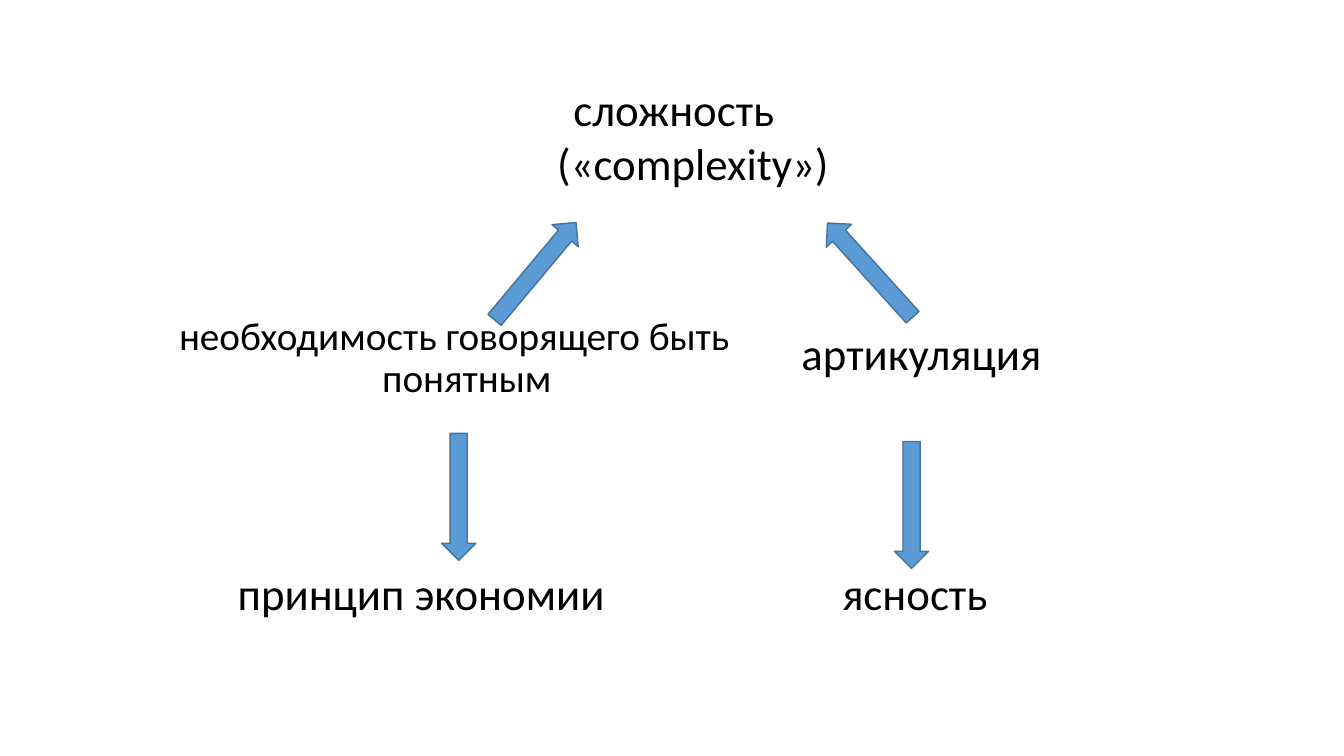
from dataclasses import dataclass

from pptx import Presentation
from pptx.dml.color import RGBColor
from pptx.enum.shapes import MSO_SHAPE
from pptx.enum.text import PP_ALIGN
from pptx.util import Inches, Pt

BLACK = RGBColor(0x00, 0x00, 0x00)
BLUE = RGBColor(0x5B, 0x9B, 0xD5)
EDGE = RGBColor(0x43, 0x73, 0x9E)
FONT = "Calibri"

WIDE, HIGH = Inches(13.33), Inches(7.5)
LINE = 8.5  # height of one text row, in percent of the slide
LOW = 74.13  # top of the bottom row of labels
LONG, THICK = 9.45, 4.53  # arrow size


@dataclass
class Label:
    """Place is in percent of the slide's width and height."""
    text: str
    left: float
    top: float
    width: float
    rows: int = 1
    size: int = 32
    hang: float = 0.38
    space: float = 1.0
    align: PP_ALIGN = PP_ALIGN.CENTER


@dataclass
class Arrow:
    """Place of the centre in percent of the slide, turn in degrees."""
    mid: float
    row: float
    turn: float


LABELS = [
    Label("cложность («complexity»)", 31.73, 10.13, 36.83, rows=2),
    Label("необходимость говорящего быть понятным", 12.53, 41.2, 42.53,
          rows=2, size=28, hang=0.25, space=0.9),
    Label("артикуляция", 58.89, 42.4, 30.23, align=PP_ALIGN.LEFT),
    Label("принцип экономии", 16.95, LOW, 30.23, align=PP_ALIGN.LEFT),
    Label("ясность", 52.96, LOW, 30.23),
]

ARROWS = [
    Arrow(39.83, 35.87, 309.9),
    Arrow(64.74, 35.73, 227.9),
    Arrow(34.13, 65.73, 90),
    Arrow(67.82, 66.8, 90),
]


def across(share: float) -> int:
    return round(WIDE * share / 100)


def down(share: float) -> int:
    return round(HIGH * share / 100)


def write(frame, text: str, *, size: int, hang: float, space: float,
          align: PP_ALIGN) -> None:
    """Fill a text frame with one paragraph that has a hanging indent."""
    frame.word_wrap = True
    para = frame.paragraphs[0]
    para.alignment = align
    para.line_spacing = space
    props = para._p.get_or_add_pPr()
    props.set("marL", str(Inches(hang)))
    props.set("indent", str(-Inches(hang)))
    run = para.add_run()
    run.text = text
    run.font.name = FONT
    run.font.size = Pt(size)
    run.font.color.rgb = BLACK


def add_label(slide, label: Label) -> None:
    box = slide.shapes.add_textbox(across(label.left), down(label.top),
                                   across(label.width),
                                   down(LINE * label.rows))
    write(box.text_frame, label.text, size=label.size, hang=label.hang,
          space=label.space, align=label.align)


def add_arrow(slide, arrow: Arrow) -> None:
    wide, high = across(LONG), down(THICK)
    shape = slide.shapes.add_shape(
        MSO_SHAPE.RIGHT_ARROW, across(arrow.mid) - wide // 2,
        down(arrow.row) - high // 2, wide, high)
    shape.rotation = arrow.turn
    shape.shadow.inherit = False
    shape.fill.solid()
    shape.fill.fore_color.rgb = BLUE
    shape.line.color.rgb = EDGE
    shape.line.width = Pt(1)


def main() -> None:
    deck = Presentation()
    deck.slide_width, deck.slide_height = WIDE, HIGH
    slide = deck.slides.add_slide(deck.slide_layouts[6])
    for label in LABELS:
        add_label(slide, label)
    for arrow in ARROWS:
        add_arrow(slide, arrow)
    deck.save("out.pptx")


if __name__ == "__main__":
    main()
